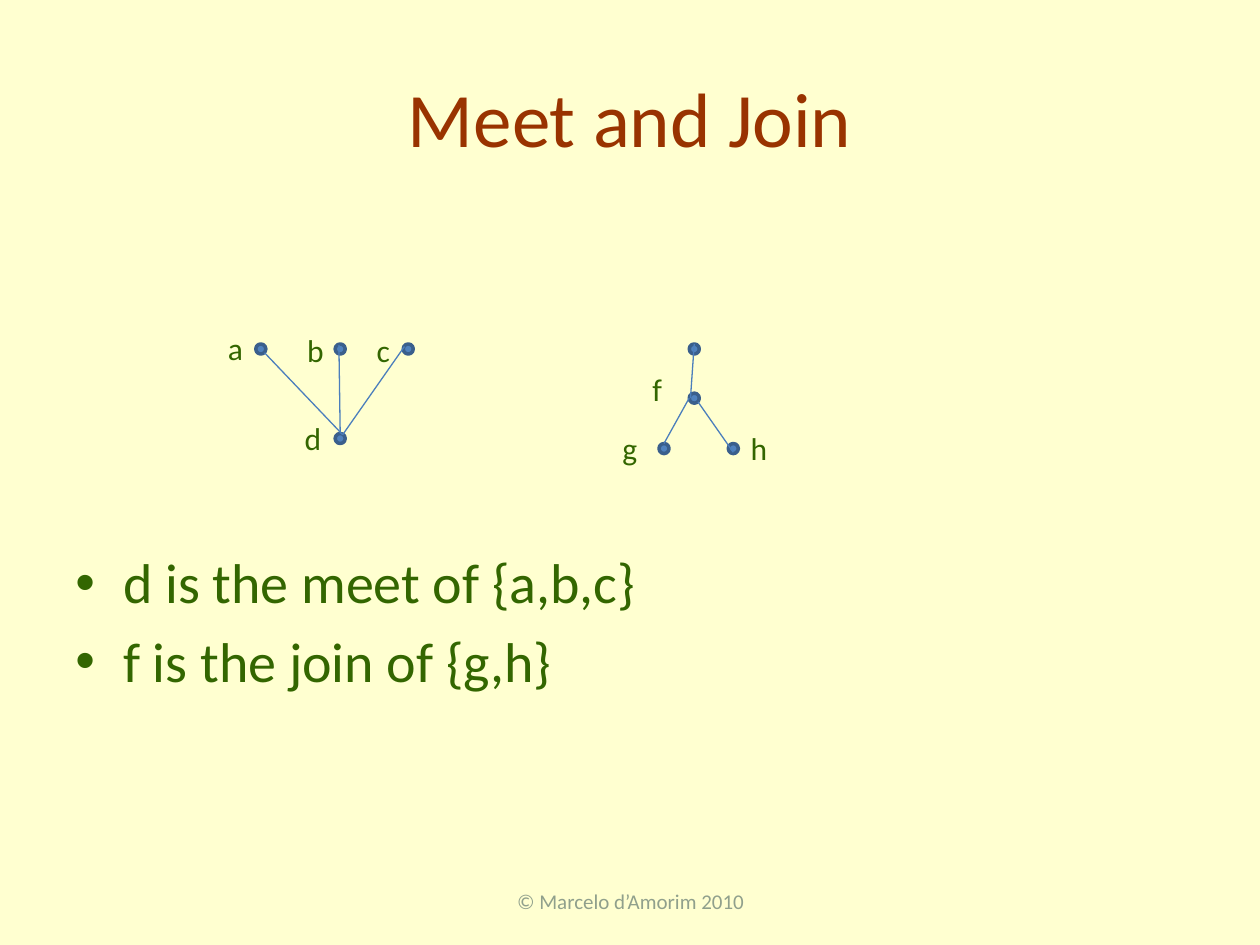
import pptx
import pptx.dml.color
import pptx.enum.shapes
import pptx.enum.text
import pptx.oxml
import pptx.oxml.ns
import pptx.util
from pptx.util import Inches

RGBColor = pptx.dml.color.RGBColor
PALE_YELLOW = RGBColor(0xFF, 0xFF, 0xD0)
RUST = RGBColor(0x99, 0x33, 0x00)
GREEN = RGBColor(0x33, 0x66, 0x00)
GREY_GREEN = RGBColor(0x90, 0xA0, 0x8C)
NODE_FILL = RGBColor(0x4F, 0x81, 0xBD)
NODE_LINE = RGBColor(0x3A, 0x5F, 0x8C)
EDGE_BLUE = RGBColor(0x4B, 0x7E, 0xBC)

FONT = "Calibri"
NODE_SIZE = 0.08
LABEL_HEIGHT = 0.4

MEET = {
    "nodes": [(0.95, 0.17), (0.32, 0.17), (1.49, 0.17), (0.95, 0.88)],
    "edges": [
        ((0.39, 0.24), (1.01, 0.89)),
        ((0.98, 0.18), (0.99, 0.88)),
        ((1.5, 0.19), (1.01, 0.89)),
    ],
    "labels": [
        ("a", 0, 0, 0.32),
        ("b", 0.63, 0.02, 0.34),
        ("c", 1.18, 0.02, 0.31),
        ("d", 0.61, 0.72, 0.34),
    ],
}
JOIN = {
    "nodes": [(0.63, 0.17), (0.63, 0.56), (0.94, 0.96), (0.39, 0.96)],
    "edges": [
        ((0.67, 0.17), (0.64, 0.6)),
        ((0.63, 0.6), (0.43, 0.96)),
        ((0.7, 0.63), (0.98, 1.03)),
    ],
    "labels": [
        ("f", 0.24, 0.33, 0.28),
        ("g", 0, 0.8, 0.32),
        ("h", 1.02, 0.8, 0.34),
    ],
}


def place(shape, box):
    """Move a shape to a box given in inches."""
    shape.left, shape.top, shape.width, shape.height = map(Inches, box)


def format_text(frame, size, color, align):
    """Give every paragraph the same font, size, colour and alignment."""
    for paragraph in frame.paragraphs:
        paragraph.alignment = align
        for run in paragraph.runs:
            run.font.name = FONT
            run.font.size = pptx.util.Pt(size)
            run.font.color.rgb = color


def add_title(slide, box):
    """Fill and format the title placeholder."""
    title = slide.shapes.title
    place(title, box)
    frame = title.text_frame
    frame.text = "Meet and Join"
    frame.vertical_anchor = pptx.enum.text.MSO_ANCHOR.MIDDLE
    format_text(frame, 44, RUST, pptx.enum.text.PP_ALIGN.CENTER)


def add_text(slide, box, text, size, color, align, wrap=True):
    """Add a formatted text box and return its text frame."""
    frame = slide.shapes.add_textbox(*map(Inches, box)).text_frame
    frame.word_wrap = wrap
    frame.text = text
    format_text(frame, size, color, align)
    return frame


def add_diagram(slide, box, diagram):
    """Draw the nodes, edges and labels of one ordering diagram."""
    left, top = box[:2]
    graph = slide.shapes.add_group_shape()
    for x, y in diagram["nodes"]:
        node = graph.shapes.add_shape(
            pptx.enum.shapes.MSO_SHAPE.OVAL,
            Inches(left + x), Inches(top + y), Inches(NODE_SIZE), Inches(NODE_SIZE))
        node.shadow.inherit = False
        node.fill.solid()
        node.fill.fore_color.rgb = NODE_FILL
        node.line.color.rgb = NODE_LINE
        node.line.width = pptx.util.Pt(2)
    for (x1, y1), (x2, y2) in diagram["edges"]:
        edge = graph.shapes.add_connector(
            pptx.enum.shapes.MSO_CONNECTOR.STRAIGHT,
            Inches(left + x1), Inches(top + y1), Inches(left + x2), Inches(top + y2))
        edge.line.color.rgb = EDGE_BLUE
        edge.line.width = pptx.util.Pt(0.75)
        edge.element.spPr.append(pptx.oxml.parse_xml(
            "<a:effectLst %s/>" % pptx.oxml.ns.nsdecls("a")))
    for text, x, y, width in diagram["labels"]:
        add_text(slide, (left + x, top + y, width, LABEL_HEIGHT), text, 18, GREEN,
                 pptx.enum.text.PP_ALIGN.LEFT, wrap=False)


def add_definitions(slide, box):
    """Add the bulleted definitions."""
    frame = add_text(slide, box, "d is the meet of {a,b,c}\nf is the join of {g,h}",
                     32, GREEN, pptx.enum.text.PP_ALIGN.LEFT)
    for paragraph in frame.paragraphs:
        paragraph.space_before = pptx.util.Pt(6.4)
        properties = paragraph._p.get_or_add_pPr()
        properties.set("marL", str(Inches(0.38)))
        properties.set("indent", str(Inches(-0.38)))
        properties.append(pptx.oxml.parse_xml(
            '<a:buFont %s typeface="Arial"/>' % pptx.oxml.ns.nsdecls("a")))
        properties.append(pptx.oxml.parse_xml(
            '<a:buChar %s char="•"/>' % pptx.oxml.ns.nsdecls("a")))


def add_footer(slide, box):
    """Add the copyright line."""
    frame = add_text(slide, box, "© Marcelo d’Amorim 2010", 12, GREY_GREEN,
                     pptx.enum.text.PP_ALIGN.CENTER)
    frame.vertical_anchor = pptx.enum.text.MSO_ANCHOR.MIDDLE


def main():
    """Build and save the slide."""
    deck = pptx.Presentation()
    deck.slide_width, deck.slide_height = Inches(10), Inches(7.5)
    slide = deck.slides.add_slide(deck.slide_layouts[5])
    slide.background.fill.solid()
    slide.background.fill.fore_color.rgb = PALE_YELLOW
    add_title(slide, (0.5, 0.3, 9, 1.25))
    add_footer(slide, (3.42, 6.95, 3.17, 0.4))
    add_diagram(slide, (1.71, 2.56, 1.57, 1.12), MEET)
    add_diagram(slide, (4.84, 2.56, 1.36, 1.2), JOIN)
    add_definitions(slide, (0.5, 4.3, 9, 2.4))
    deck.save("out.pptx")


if __name__ == "__main__":
    main()
